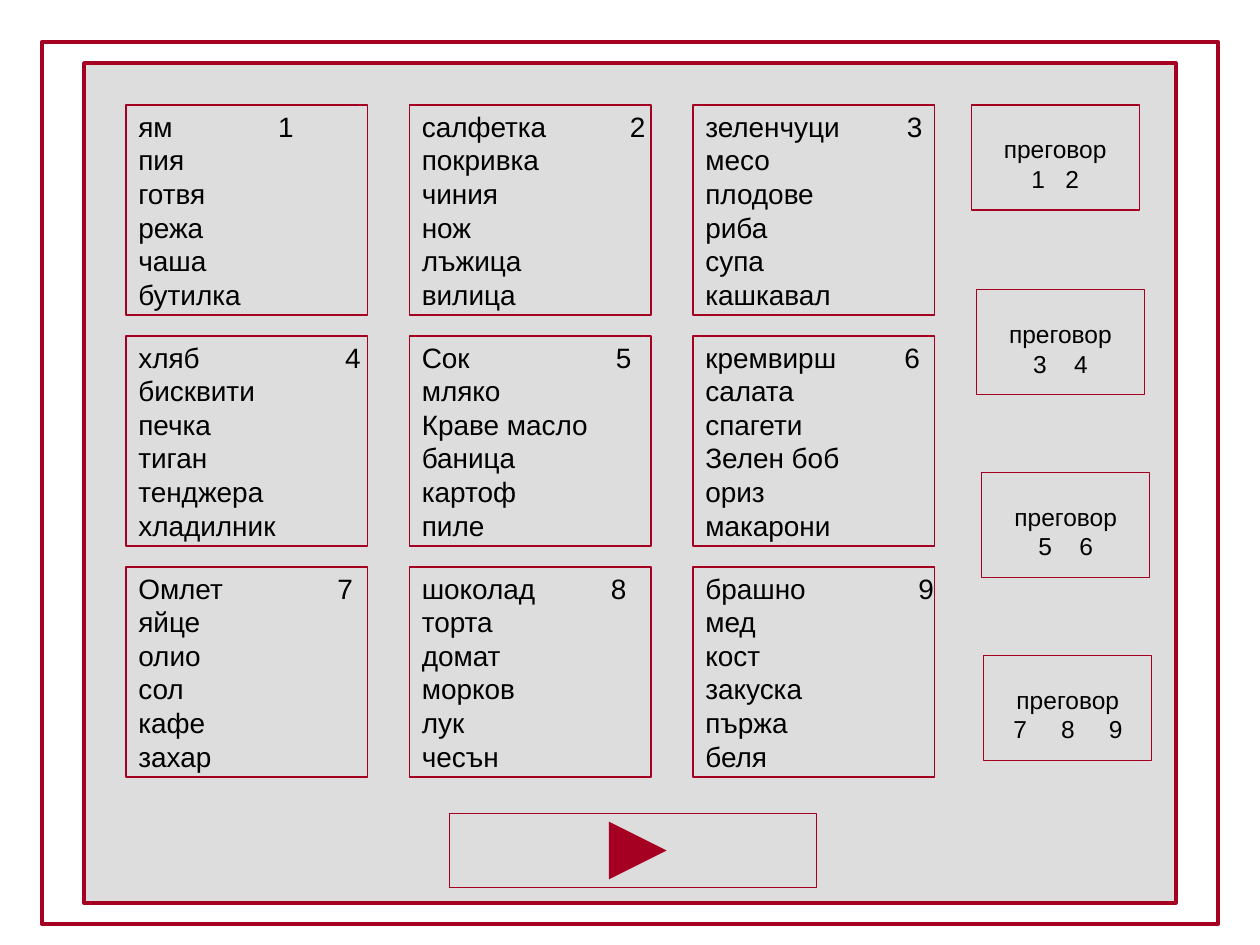
import pptx
import pptx.util
import pptx.dml.color
import pptx.enum.shapes
import pptx.enum.text
import pptx.oxml
import pptx.oxml.ns
from dataclasses import dataclass

COLUMNS, ROWS = 120, 90


@dataclass(frozen=True)
class Theme:
    accent: str = "A50021"
    panel: str = "DDDDDD"
    text: str = "000000"
    font: str = "Arial"
    word_size: float = 16
    review_size: float = 14


def rgb(value):
    return pptx.dml.color.RGBColor.from_string(value)


def add_xml(parent, tag, **attributes):
    child = pptx.oxml.parse_xml(f"<a:{tag} {pptx.oxml.ns.nsdecls('a')}/>")
    for name, value in attributes.items():
        child.set(name, str(value))
    parent.append(child)
    return child


class Board:
    """Draws on one slide, with lengths in grid columns and rows."""

    def __init__(self, prs, theme):
        self.theme = theme
        self.slide = prs.slides.add_slide(prs.slide_layouts[6])
        self.column = prs.slide_width / COLUMNS
        self.row = prs.slide_height / ROWS

    def place(self, x, y):
        return round(x * self.column), round(y * self.row)

    def box(self, x, y, width, height, line=0.75, fill=None):
        sp = self.slide.shapes.add_shape(
            pptx.enum.shapes.MSO_SHAPE.RECTANGLE,
            *self.place(x, y), *self.place(width, height))
        sp.shadow.inherit = False
        if fill:
            sp.fill.solid()
            sp.fill.fore_color.rgb = rgb(fill)
        else:
            sp.fill.background()
        sp.line.color.rgb = rgb(self.theme.accent)
        sp.line.width = pptx.util.Pt(line)
        return sp

    def format_runs(self, p, size, align):
        p.alignment = align
        for r in p.runs:
            r.font.name = self.theme.font
            r.font.size = pptx.util.Pt(size)
            r.font.color.rgb = rgb(self.theme.text)

    def word_card(self, x, y, number, tab, words):
        """A word list whose number stands at a tab stop, in inches."""
        tf = self.box(x, y, 23, 20).text_frame
        tf.word_wrap = True
        tf.margin_right = 0
        tf.vertical_anchor = pptx.enum.text.MSO_ANCHOR.MIDDLE
        first, *others = words.split(", ")
        tf.text = "\n".join([f"{first}\t{number}", *others])
        tabs = add_xml(tf.paragraphs[0]._p.get_or_add_pPr(), "tabLst")
        add_xml(tabs, "tab", pos=pptx.util.Inches(tab), algn="l")
        for p in tf.paragraphs:
            self.format_runs(p, self.theme.word_size, pptx.enum.text.PP_ALIGN.LEFT)

    def review_card(self, x, y, numbers, gap):
        """A review label over its numbers, set apart by extra points of gap."""
        tf = self.box(x, y, 16, 10).text_frame
        tf.word_wrap = False
        tf.margin_top = pptx.util.Inches(0.15)
        tf.vertical_anchor = pptx.enum.text.MSO_ANCHOR.MIDDLE
        tf.text = "преговор"
        p = tf.add_paragraph()
        for i, number in enumerate(numbers):
            if i:
                space = p.add_run()
                space.text = " "
                space.font._element.set("spc", str(round(gap * 100)))
            p.add_run().text = number
        for p in tf.paragraphs:
            self.format_runs(p, self.theme.review_size, pptx.enum.text.PP_ALIGN.CENTER)

    def arrow(self, x1, y1, x2, y2, width):
        s = self.slide.shapes.add_connector(
            pptx.enum.shapes.MSO_CONNECTOR.STRAIGHT,
            *self.place(x1, y1), *self.place(x2, y2))
        s.line.color.rgb = rgb(self.theme.accent)
        s.line.width = pptx.util.Pt(width)
        spPr = s._element.spPr
        add_xml(spPr.find(pptx.oxml.ns.qn("a:ln")), "tailEnd", type="triangle")
        add_xml(spPr, "effectLst")


WORD_CARDS = [
    (1.11, "ям, пия, готвя, режа, чаша, бутилка"),
    (1.65, "салфетка, покривка, чиния, нож, лъжица, вилица"),
    (1.6, "зеленчуци, месо, плодове, риба, супа, кашкавал"),
    (1.64, "хляб, бисквити, печка, тиган, тенджера, хладилник"),
    (1.54, "Сок, мляко, Краве масло, баница, картоф, пиле"),
    (1.58, "кремвирш, салата, спагети, Зелен боб, ориз, макарони"),
    (1.58, "Омлет, яйце, олио, сол, кафе, захар"),
    (1.5, "шоколад, торта, домат, морков, лук, чесън"),
    (1.69, "брашно, мед, кост, закуска, пържа, беля"),
]
REVIEW_CARDS = [
    (92.5, 10, "12", 7.8),
    (93, 27.6, "34", 11.7),
    (93.5, 45, "56", 11.7),
    (93.7, 62.4, "789", 15.6),
]


def main():
    prs = pptx.Presentation()
    prs.slide_width = pptx.util.Inches(10)
    prs.slide_height = pptx.util.Inches(7.5)
    theme = Theme()
    board = Board(prs, theme)

    board.box(4, 4, 112, 84, line=2.5)
    board.box(8, 6, 104, 80, line=2, fill=theme.panel)
    for i, (tab, words) in enumerate(WORD_CARDS):
        row, column = divmod(i, 3)
        board.word_card(12 + 27 * column, 10 + 22 * row, i + 1, tab, words)
    for card in REVIEW_CARDS:
        board.review_card(*card)
    board.arrow(58.4, 81, 63.5, 81, width=11)
    board.box(42.8, 77.5, 35, 7)

    prs.save("out.pptx")


if __name__ == "__main__":
    main()
